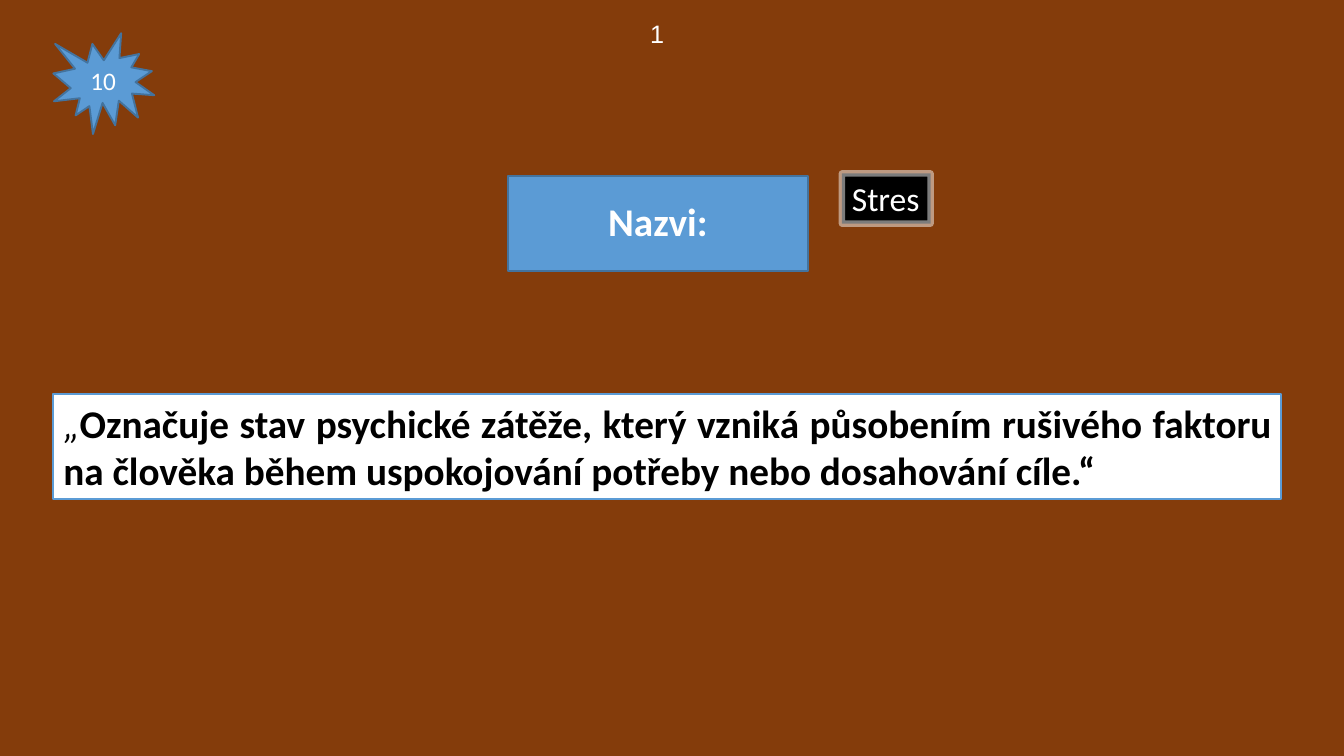
from lxml.etree import SubElement
from pptx import Presentation
from pptx.dml.color import RGBColor
from pptx.enum.shapes import MSO_SHAPE
from pptx.enum.text import MSO_ANCHOR, MSO_AUTO_SIZE, PP_ALIGN
from pptx.oxml.ns import qn
from pptx.util import Inches, Pt

BLUE, EDGE, WHITE, BLACK = "5B9BD5", "43739E", "FFFFFF", "000000"


def paint(color, tone):
    color.rgb = RGBColor.from_string(tone)


def fill(shape, tone, edge, width=1.35):
    shape.fill.solid()
    paint(shape.fill.fore_color, tone)
    paint(shape.line.color, edge)
    shape.line.width = Pt(width)


def write(shape, text, size, tone=WHITE, bold=False, align=PP_ALIGN.CENTER,
          wrap=True, face="Calibri"):
    frame = shape.text_frame
    frame.word_wrap = wrap
    frame.vertical_anchor = MSO_ANCHOR.MIDDLE
    frame.auto_size = MSO_AUTO_SIZE.NONE
    line = frame.paragraphs[0]
    line.text = text
    line.alignment = align
    line.font.name = face
    line.font.size = Pt(size)
    line.font.bold = bold
    paint(line.font.color, tone)
    return line


def add(slide, kind, box):
    shape = slide.shapes.add_shape(kind, *map(Inches, box))
    shape.shadow.inherit = False
    return shape


def add_title(slide, box):
    title = slide.shapes.title
    title.left, title.top, title.width, title.height = map(Inches, box)
    fill(title, BLUE, EDGE)
    line = write(title, "Nazvi:", 28, bold=True)
    line.line_spacing = 0.9


def add_score(slide, box):
    star = add(slide, MSO_SHAPE.EXPLOSION1, box)
    fill(star, BLUE, EDGE)
    write(star, "10", 18)


def add_number(slide, box):
    label = slide.shapes.add_textbox(*map(Inches, box))
    write(label, "1", 18, align=PP_ALIGN.LEFT, wrap=False, face="Arial")
    label.text_frame.vertical_anchor = MSO_ANCHOR.TOP


def add_clue(slide, box):
    panel = add(slide, MSO_SHAPE.RECTANGLE, box)
    fill(panel, WHITE, BLUE)
    line = write(panel, "", 28, BLACK, align=PP_ALIGN.JUSTIFY)
    parts = (
        ("„", False),
        ("Označuje stav psychické zátěže, který vzniká působením rušivého "
         "faktoru na člověka během uspokojování potřeby nebo dosahování "
         "cíle.“", True),
    )
    for text, bold in parts:
        run = line.add_run()
        run.text = text
        run.font.name = "Calibri"
        run.font.size = Pt(28)
        run.font.bold = bold
        run.font.italic = not bold
        paint(run.font.color, BLACK)
    panel.text_frame.vertical_anchor = MSO_ANCHOR.TOP


def add_answer(slide, box):
    card = add(slide, MSO_SHAPE.RECTANGLE, box)
    fill(card, BLACK, "F9F9F9", 4.6)
    stroke = card.line.fill._xPr
    tone = stroke.find(qn("a:solidFill")).find(qn("a:srgbClr"))
    SubElement(tone, qn("a:alpha"), val="50000")
    SubElement(stroke, qn("a:round"))
    write(card, "Stres", 24, align=PP_ALIGN.LEFT, wrap=False)
    card.text_frame.vertical_anchor = MSO_ANCHOR.TOP


def main():
    deck = Presentation()
    deck.slide_width, deck.slide_height = Inches(13.33), Inches(7.5)
    slide = deck.slides.add_slide(deck.slide_layouts[5])
    back = slide.background.fill
    back.solid()
    paint(back.fore_color, "843C0B")
    add_title(slide, (5.04, 1.75, 2.97, 0.94))
    add_score(slide, (0.53, 0.33, 1, 1))
    add_number(slide, (6.35, 0.13, 0.34, 0.4))
    add_clue(slide, (0.53, 3.91, 12.18, 1.04))
    add_answer(slide, (8.35, 1.72, 0.88, 0.5))
    deck.save("out.pptx")


if __name__ == "__main__":
    main()
